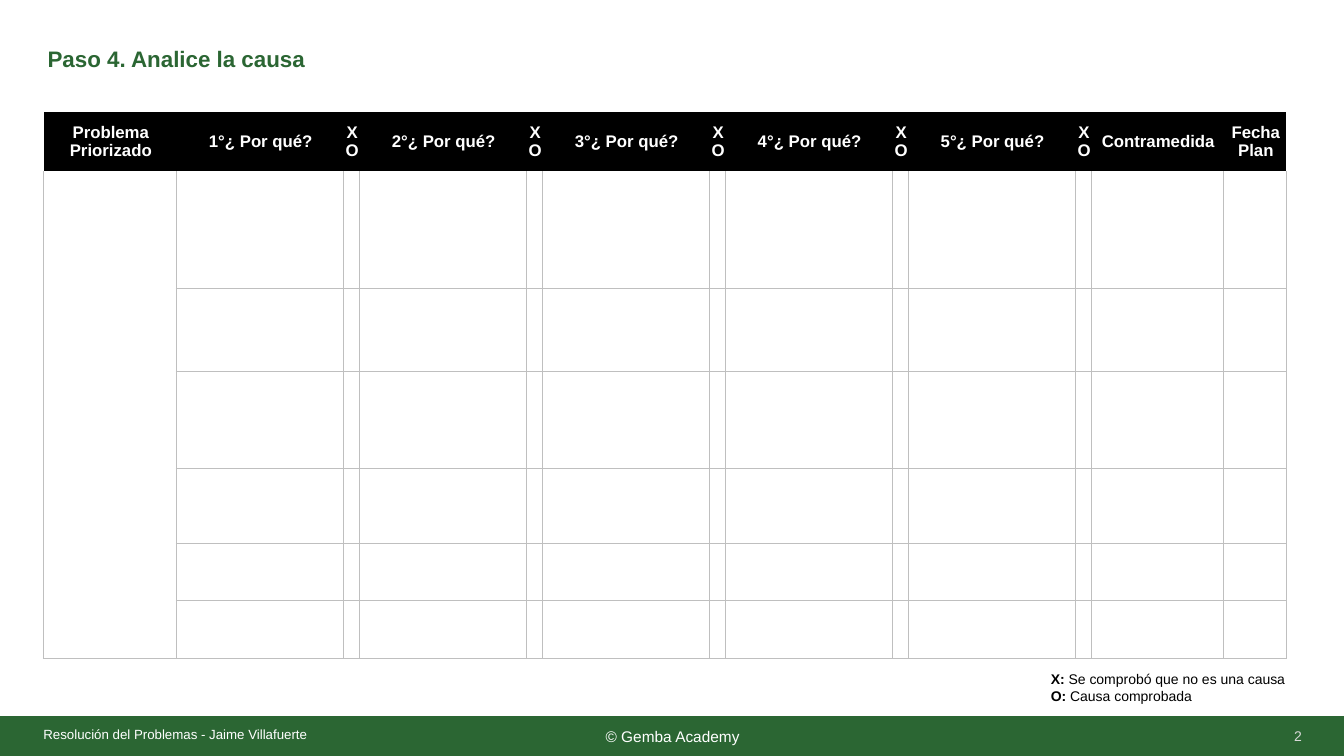
from lxml import etree
from pptx import Presentation
from pptx.dml.color import RGBColor
from pptx.enum.shapes import MSO_SHAPE
from pptx.enum.text import MSO_ANCHOR, PP_ALIGN
from pptx.oxml.ns import qn
from pptx.util import Pt

GREEN = RGBColor(0x2B, 0x66, 0x33)
WHITE = RGBColor(0xFF, 0xFF, 0xFF)
BLACK = RGBColor(0, 0, 0)
PALE = RGBColor(0xD9, 0xD9, 0xD9)
GRID = RGBColor(0xBF, 0xBF, 0xBF)


def write(tf, paragraphs, size, color, align=PP_ALIGN.LEFT, margins=(7.2, 3.6, 7.2, 3.6)):
    names = ("margin_left", "margin_top", "margin_right", "margin_bottom")
    frame = {name: Pt(m) for name, m in zip(names, margins)}
    frame.update(word_wrap=True, vertical_anchor=MSO_ANCHOR.MIDDLE)
    for name, value in frame.items():
        setattr(tf, name, value)
    for i, runs in enumerate(paragraphs):
        p = tf.add_paragraph() if i else tf.paragraphs[0]
        p.alignment = align
        for text, bold in runs:
            r = p.add_run()
            r.text = text
            for name, value in {"name": "Arial", "size": Pt(size), "bold": bold}.items():
                setattr(r.font, name, value)
            r.font.color.rgb = color


def border(cell, side, color):
    tag = {"left": "a:lnL", "right": "a:lnR", "top": "a:lnT", "bottom": "a:lnB"}[side]
    ln = etree.Element(qn(tag), w=str(Pt(1)))
    if color is None:
        etree.SubElement(ln, qn("a:noFill"))
    else:
        fill = etree.SubElement(ln, qn("a:solidFill"))
        etree.SubElement(fill, qn("a:srgbClr"), val=str(color))
    cell._tc.get_or_add_tcPr().append(ln)


prs = Presentation()
prs.slide_width, prs.slide_height = Pt(960), Pt(540)
s = prs.slides.add_slide(prs.slide_layouts[5])

title = s.shapes.title
title.left, title.top, title.width, title.height = Pt(26.8), Pt(24.5), Pt(828), Pt(37.4)
write(title.text_frame, [[("Paso 4. Analice la causa", True)]], 16, GREEN)
title.text_frame.paragraphs[0].line_spacing = 0.9

footer = s.shapes.add_shape(MSO_SHAPE.RECTANGLE, Pt(0), Pt(511.6), Pt(961), Pt(28.8))
footer.shadow.inherit = False
footer.fill.solid()
footer.fill.fore_color.rgb = GREEN
footer.line.fill.background()
write(footer.text_frame, [[("© Gemba Academy", False)]], 11, WHITE, PP_ALIGN.CENTER)

author = s.shapes.add_textbox(Pt(31), Pt(516), Pt(216), Pt(17.3))
write(author.text_frame, [[("Resolución del Problemas - Jaime Villafuerte", False)]],
      9.5, WHITE, margins=(0, 0, 0, 0))

number = s.shapes.add_textbox(Pt(721), Pt(511.4), Pt(216), Pt(28.8))
write(number.text_frame, [[("2", False)]], 10, PALE, PP_ALIGN.RIGHT)

headers = ["Problema Priorizado"]
for n in range(1, 6):
    headers += [f"{n}°¿ Por qué?", "XO"]
headers += ["Contramedida", "Fecha Plan"]
widths = [95] + [119.2, 11.5] * 5 + [94.5, 45]
heights = [42, 84, 59.3, 69.2, 53.6, 41, 41]

table = s.shapes.add_table(len(heights), len(widths), Pt(31.1), Pt(80.2),
                           Pt(sum(widths)), Pt(sum(heights))).table
table.first_row = table.horz_banding = False
for column, width in zip(table.columns, widths):
    column.width = Pt(width)
for row, height in zip(table.rows, heights):
    row.height = Pt(height)

for i in range(len(heights)):
    for j, header in enumerate(headers):
        cell = table.cell(i, j)
        for side in ("left", "right", "top", "bottom"):
            hidden = i == 0 or (i == 1 and side == "top")
            border(cell, side, None if hidden else GRID)
        cell.fill.solid()
        cell.fill.fore_color.rgb = WHITE if i else BLACK
        cell.margin_left, cell.margin_right = Pt(1.2), Pt(0)
        cell.margin_top = cell.margin_bottom = Pt(0.7)
        cell.vertical_anchor = MSO_ANCHOR.MIDDLE
        if i == 0:
            p = cell.text_frame.paragraphs[0]
            p.alignment = PP_ALIGN.CENTER
            r = p.add_run()
            r.text = header
            for name, value in {"name": "Arial", "size": Pt(12), "bold": True}.items():
                setattr(r.font, name, value)
            r.font.color.rgb = WHITE
table.cell(1, 0).merge(table.cell(len(heights) - 1, 0))

legend = s.shapes.add_textbox(Pt(743.5), Pt(475), Pt(185), Pt(31.5))
write(legend.text_frame, [
    [("X: ", True), ("Se comprobó que no es una causa", False)],
    [("O:", True), (" Causa comprobada", False)],
], 10, BLACK)

prs.save("out.pptx")
